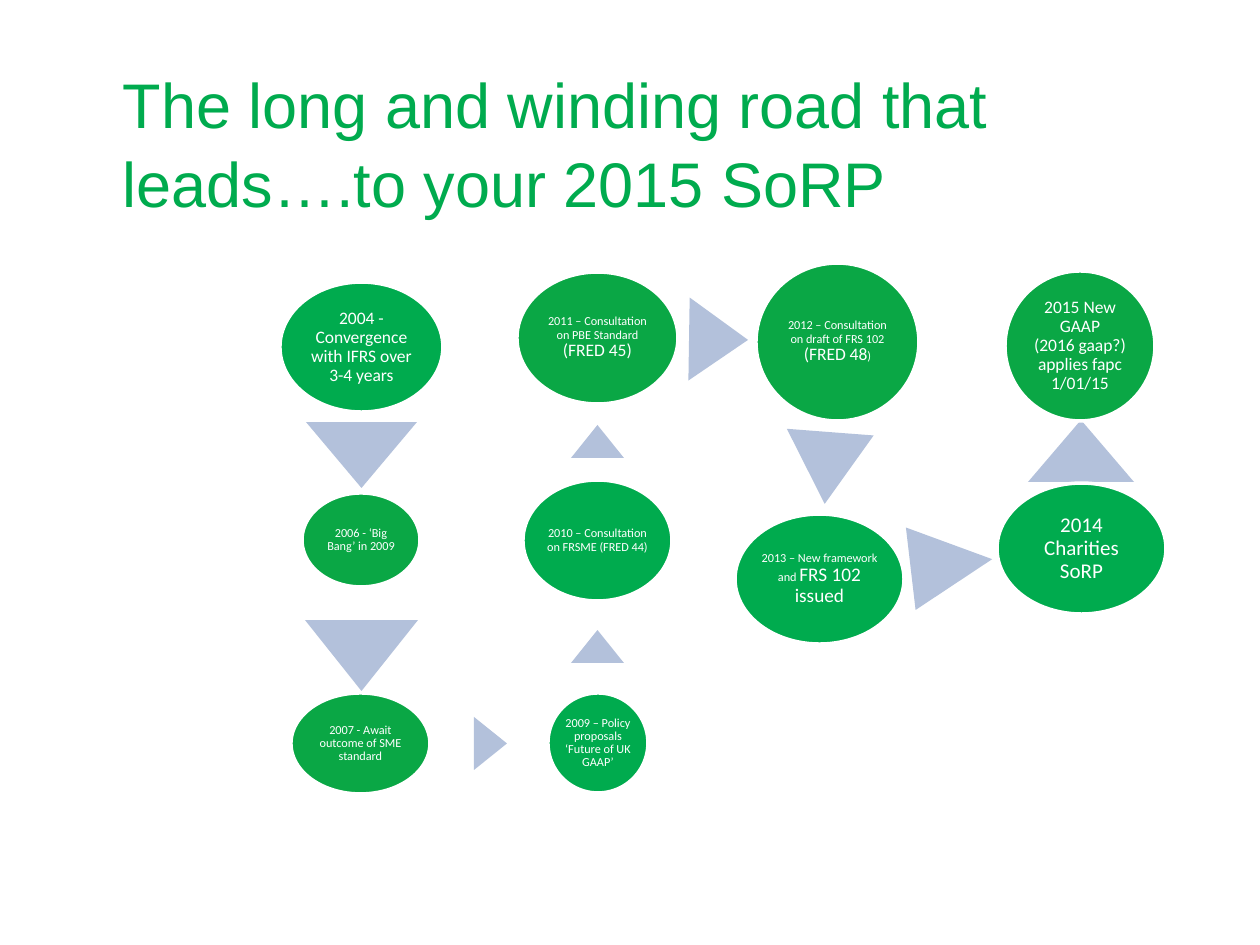
from pptx import Presentation
from pptx.dml.color import RGBColor
from pptx.enum.shapes import MSO_SHAPE
from pptx.enum.text import MSO_ANCHOR, PP_ALIGN
from pptx.util import Emu, Pt

PX_PER_INCH = 126
GREEN = RGBColor(0x00, 0xAB, 0x4E)
LEAF = RGBColor(0x0A, 0xA7, 0x45)
PALE_BLUE = RGBColor(0xB3, 0xC1, 0xDB)
WHITE = RGBColor(0xFF, 0xFF, 0xFF)

TITLE = "The long and winding road that leads….to your 2015 SoRP"
SMALL, MEDIUM = 7, 10

STEPS = [
    ((280, 282, 163, 130), GREEN, [("2004 - Convergence with IFRS over 3-4 years", MEDIUM)]),
    ((302, 493, 118, 94), LEAF, [("2006 - ‘Big Bang’ in 2009", SMALL)]),
    ((291, 693, 139, 101), LEAF, [("2007 - Await outcome of SME standard", SMALL)]),
    ((548, 693, 100, 100), GREEN, [("2009 – Policy proposals ‘Future of UK GAAP’", SMALL)]),
    ((523, 480, 149, 121), GREEN, [("2010 – Consultation on FRSME (FRED 44)", SMALL)]),
    ((517, 272, 161, 132), LEAF,
     [("2011 – Consultation on PBE Standard ", SMALL), ("(FRED 45)", MEDIUM)]),
    ((756, 263, 163, 158), LEAF,
     [("2012 – Consultation on draft of FRS 102 ", SMALL), ("(FRED 48", MEDIUM), (")", SMALL)]),
    ((735, 514, 169, 130), GREEN,
     [("2013 – New framework and ", SMALL), ("FRS 102 issued", 11)]),
    ((997, 483, 169, 131), GREEN, [("2014 Charities SoRP", 12)]),
    ((1005, 271, 150, 150), LEAF,
     [("2015 New GAAP\n(2016 gaap?) applies fapc 1/01/15", MEDIUM)]),
]

ARROWS = [
    ((306, 422, 111, 66), 180),
    ((305, 620, 113, 71), 180),
    ((464, 727, 53, 33), 90),
    ((571, 630, 53, 33), 0),
    ((571, 425, 53, 33), 0),
    ((677, 310, 83, 59), 90.9),
    ((784, 432, 87, 72), 184.4),
    ((910, 523, 83, 82), 83.3),
    ((1028, 420, 106, 62), 0),
]


def px(length):
    return Emu(round(length * 914400 / PX_PER_INCH))


def apply_format(target, values):
    for name, value in values.items():
        setattr(target, name, value)


def format_font(font, name, size, color):
    apply_format(font, {"name": name, "size": Pt(size)})
    font.color.rgb = color


def add_filled_shape(slide, kind, box, color):
    shape = slide.shapes.add_shape(kind, *map(px, box))
    shape.shadow.inherit = False
    shape.fill.solid()
    shape.fill.fore_color.rgb = color
    return shape


def add_arrow(slide, box, rotation):
    shape = add_filled_shape(slide, MSO_SHAPE.ISOSCELES_TRIANGLE, box, PALE_BLUE)
    shape.line.fill.background()
    shape.rotation = rotation


def add_step(slide, box, color, pieces):
    shape = add_filled_shape(slide, MSO_SHAPE.OVAL, box, color)
    shape.line.color.rgb = WHITE
    shape.line.width = Pt(2)
    frame = shape.text_frame
    apply_format(frame, {
        "word_wrap": True, "vertical_anchor": MSO_ANCHOR.MIDDLE,
        "margin_left": px(1), "margin_right": px(1),
        "margin_top": px(1), "margin_bottom": px(1),
    })
    paragraph = frame.paragraphs[0]
    apply_format(paragraph, {"alignment": PP_ALIGN.CENTER, "line_spacing": 0.9})
    for text, size in pieces:
        for index, line in enumerate(text.split("\n")):
            if index:
                paragraph.add_line_break()
            run = paragraph.add_run()
            run.text = line
            format_font(run.font, "Calibri", size, WHITE)


def set_title(slide):
    title = slide.shapes.title
    apply_format(title, {"left": px(110), "top": px(39), "width": px(1134), "height": px(204)})
    frame = title.text_frame
    frame.text = TITLE
    apply_format(frame, {"word_wrap": True, "vertical_anchor": MSO_ANCHOR.MIDDLE})
    paragraph = frame.paragraphs[0]
    apply_format(paragraph, {"alignment": PP_ALIGN.LEFT, "line_spacing": 1.05})
    format_font(paragraph.runs[0].font, "Arial", 36, GREEN)


def main():
    presentation = Presentation()
    apply_format(presentation, {"slide_width": px(1260), "slide_height": px(945)})
    slide = presentation.slides.add_slide(presentation.slide_layouts[5])
    set_title(slide)
    for arrow in ARROWS:
        add_arrow(slide, *arrow)
    for step in STEPS:
        add_step(slide, *step)
    presentation.save("out.pptx")


if __name__ == "__main__":
    main()
